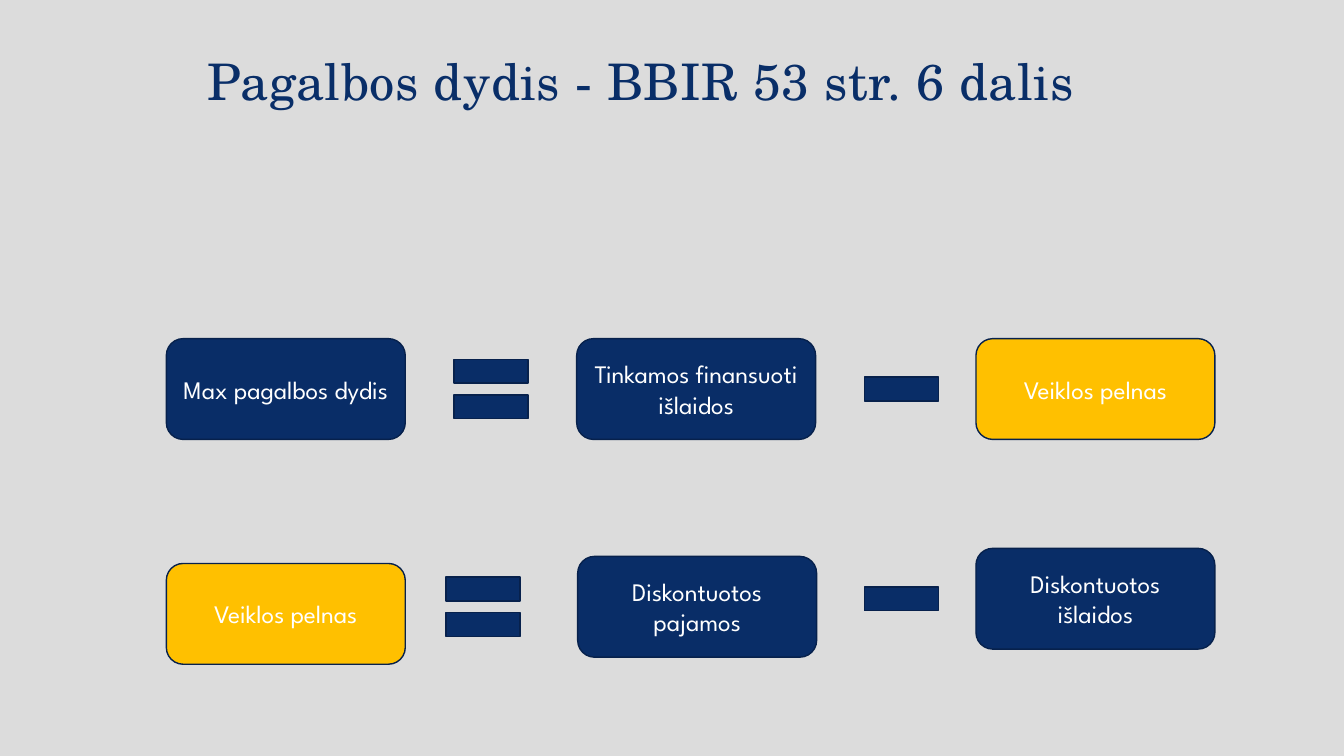
from pptx import Presentation
from pptx.dml.color import RGBColor
from pptx.enum.shapes import MSO_SHAPE
from pptx.enum.text import MSO_ANCHOR, MSO_AUTO_SIZE, PP_ALIGN
from pptx.util import Inches, Pt

GREY = RGBColor(0xDC, 0xDC, 0xDC)
INK = RGBColor(0x09, 0x2E, 0x68)
NAVY = RGBColor(0x09, 0x2D, 0x67)
EDGE = RGBColor(0x07, 0x21, 0x4C)
GOLD = RGBColor(0xFF, 0xC0, 0x00)
WHITE = RGBColor(0xFF, 0xFF, 0xFF)
ROUND = MSO_SHAPE.ROUNDED_RECTANGLE
EQUAL = MSO_SHAPE.MATH_EQUAL
MINUS = MSO_SHAPE.MATH_MINUS
TOP, MIDDLE = MSO_ANCHOR.TOP, MSO_ANCHOR.MIDDLE
LEFT, CENTER = PP_ALIGN.LEFT, PP_ALIGN.CENTER
NO_FIT = MSO_AUTO_SIZE.NONE
TERM, SIGN = 2.37, 1


def add_title(slide, text, left, top, width, height):
    """Place the slide title in the given box."""
    title = slide.shapes.title
    title.left, title.top = Inches(left), Inches(top)
    title.width, title.height = Inches(width), Inches(height)
    frame = title.text_frame
    frame.text = text
    frame.word_wrap = True
    frame.auto_size = NO_FIT
    frame.vertical_anchor = TOP
    line = frame.paragraphs[0]
    line.alignment = LEFT
    line.line_spacing = 0.8
    line.space_after = Pt(12)
    font = line.runs[0].font
    font.name, font.size = "TeX Gyre Schola", Pt(36)
    font.color.rgb = INK
    line.runs[0]._r.get_or_add_rPr().set("spc", "40")


def add_part(slide, kind, left, top, width, fill):
    """Add one filled shape of a formula, one inch high."""
    part = slide.shapes.add_shape(
        kind, Inches(left), Inches(top), Inches(width), Inches(1))
    part.shadow.inherit = False
    part.fill.solid()
    part.fill.fore_color.rgb = fill
    part.line.color.rgb = EDGE
    part.line.width = Pt(1)
    return part


def add_term(slide, text, left, top, fill):
    """Add a rounded box with a centred label."""
    frame = add_part(slide, ROUND, left, top, TERM, fill).text_frame
    frame.text = text
    frame.word_wrap = True
    frame.vertical_anchor = MIDDLE
    line = frame.paragraphs[0]
    line.alignment = CENTER
    font = line.runs[0].font
    font.name, font.size = "League Spartan", Pt(18)
    font.color.rgb = WHITE


def add_row(slide, left, top, terms, signs):
    """Add a formula row whose parts are offset from its left and top."""
    for text, right, down, fill in terms:
        add_term(slide, text, left + right, top + down, fill)
    for kind, right, down in signs:
        add_part(slide, kind, left + right, top + down, SIGN, NAVY)


def main():
    """Build and save the slide."""
    deck = Presentation()
    deck.slide_width, deck.slide_height = Inches(13.33), Inches(7.5)
    slide = deck.slides.add_slide(deck.slide_layouts[5])
    slide.background.fill.solid()
    slide.background.fill.fore_color.rgb = GREY
    add_title(slide, "Pagalbos dydis - BBIR 53 str. 6 dalis",
              1.96, 0.56, 10.88, 1.07)
    add_row(slide, 1.65, 3.36,
            [("Max pagalbos dydis", 0, 0, NAVY),
             ("Tinkamos finansuoti išlaidos", 4.07, 0, NAVY),
             ("Veiklos pelnas", 8.03, 0, GOLD)],
            [(EQUAL, 2.72, 0), (MINUS, 6.79, 0)])
    add_row(slide, 1.65, 5.44,
            [("Veiklos pelnas", 0, 0.15, GOLD),
             ("Diskontuotos pajamos", 4.08, 0.08, NAVY),
             ("Diskontuotos išlaidos", 8.03, 0, NAVY)],
            [(EQUAL, 2.64, 0.08), (MINUS, 6.79, 0)])
    deck.save("out.pptx")


if __name__ == "__main__":
    main()
